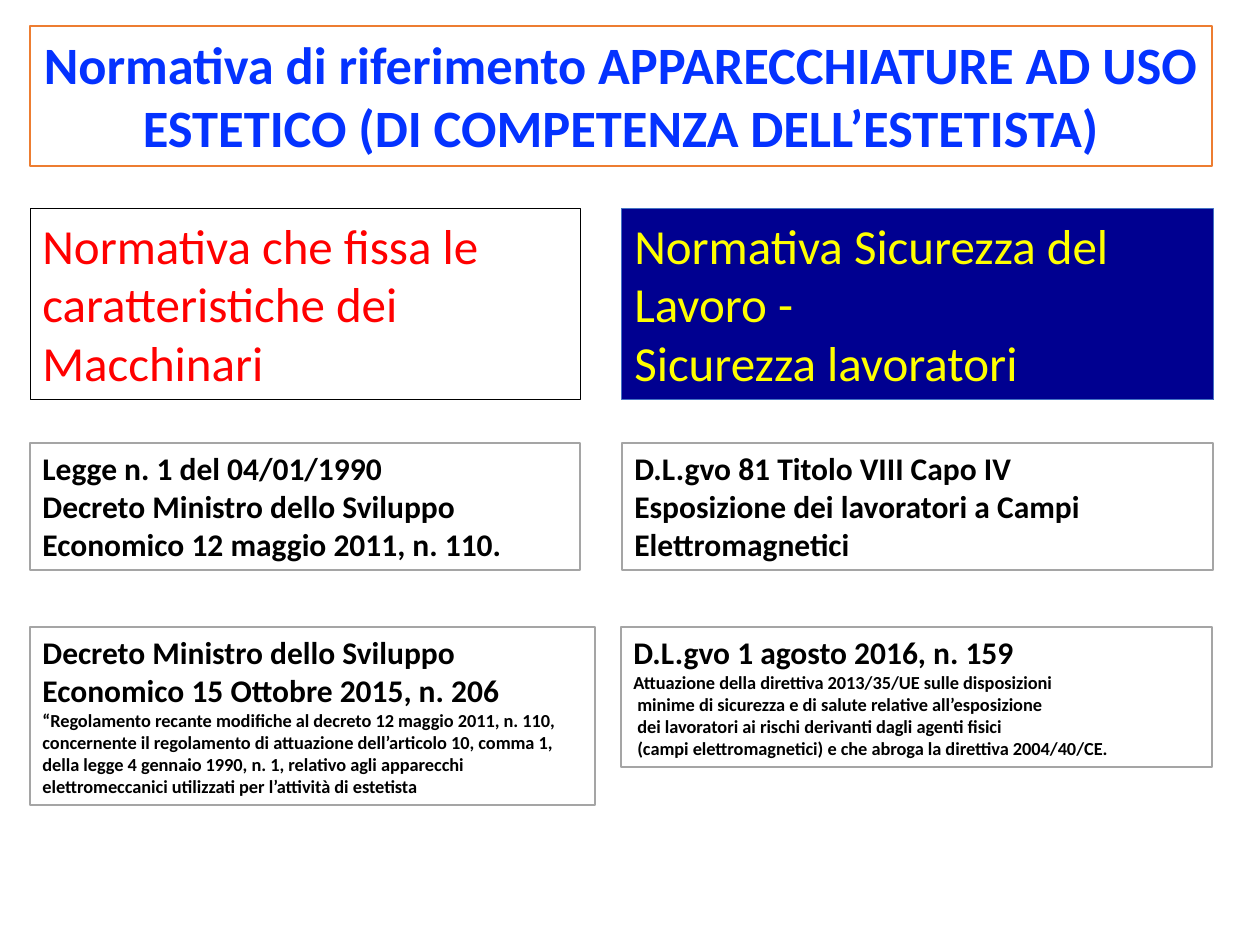
import pptx
import pptx.dml.color
import pptx.enum.shapes
import pptx.enum.text
import pptx.util

PX = 914400 // 126
FONT = "Calibri"
LEFT, RIGHT = 30, 622
HEADING_TOP, LAW_TOP, UPDATE_TOP = 209, 443, 627
COLORS = {
    "white": "FFFFFF", "black": "000000", "blue": "0432FF", "red": "FF0000",
    "yellow": "FFFF00", "navy": "000090", "orange": "ED7D31",
    "gray": "A5A5A5", "steel": "4472C4",
}


def color(name):
    return pptx.dml.color.RGBColor.from_string(COLORS[name])


def place(s, x, y, w, h):
    s.left, s.top, s.width, s.height = [v * PX for v in (x, y, w, h)]


def style_box(s, fill, line, width):
    if fill:
        s.fill.solid()
        s.fill.fore_color.rgb = color(fill)
    else:
        s.fill.background()
    s.line.color.rgb = color(line)
    s.line.width = pptx.util.Pt(width)


def add_text(s, lines, ink, bold, align):
    tf = s.text_frame
    tf.word_wrap = True
    tf.auto_size = pptx.enum.text.MSO_AUTO_SIZE.SHAPE_TO_FIT_TEXT
    tf.vertical_anchor = pptx.enum.text.MSO_ANCHOR.TOP
    for i, (text, size, indent) in enumerate(lines):
        p = tf.add_paragraph() if i else tf.paragraphs[0]
        p.alignment = align
        if indent:
            p._p.get_or_add_pPr().set("marL", str(indent * PX))
        r = p.add_run()
        r.text = text
        r.font.name = FONT
        r.font.size = pptx.util.Pt(size)
        r.font.bold = bold
        r.font.color.rgb = color(ink)


def add_title(slide, text):
    s = slide.shapes.title
    place(s, LEFT, 26, 1182, 140)
    style_box(s, "white", "orange", 1)
    add_text(s, [(text, 30, 0)], "blue", True, pptx.enum.text.PP_ALIGN.CENTER)


def add_box(slide, box, lines, ink="black", fill="white", line="gray", width=1, bold=True):
    s = slide.shapes.add_shape(pptx.enum.shapes.MSO_SHAPE.RECTANGLE, 0, 0, PX, PX)
    place(s, *box)
    s.shadow.inherit = False
    style_box(s, fill, line, width)
    add_text(s, lines, ink, bold, pptx.enum.text.PP_ALIGN.LEFT)


def main():
    prs = pptx.Presentation()
    prs.slide_width = 1260 * PX
    prs.slide_height = 945 * PX
    slide = prs.slides.add_slide(prs.slide_layouts[5])

    add_title(slide, "Normativa di riferimento APPARECCHIATURE AD USO ESTETICO "
                     "(DI COMPETENZA DELL’ESTETISTA)")
    add_box(slide, (LEFT, HEADING_TOP, 550, 191),
            [("Normativa che fissa le caratteristiche dei Macchinari", 28, 0)],
            ink="red", fill=None, line="black", width=0.5, bold=False)
    add_box(slide, (RIGHT, HEADING_TOP, 592, 191),
            [("Normativa Sicurezza del Lavoro -", 28, 0),
             ("Sicurezza lavoratori", 28, 0)],
            ink="yellow", fill="navy", line="steel", width=0.5, bold=False)
    add_box(slide, (LEFT, LAW_TOP, 550, 127),
            [("Legge n. 1 del 04/01/1990", 18, 0),
             ("Decreto Ministro dello Sviluppo Economico 12 maggio 2011, n. 110.", 18, 0)])
    add_box(slide, (RIGHT, LAW_TOP, 591, 127),
            [("D.L.gvo 81 Titolo VIII Capo IV", 18, 0),
             ("Esposizione dei lavoratori a Campi Elettromagnetici", 18, 0)])
    add_box(slide, (LEFT, UPDATE_TOP, 565, 178),
            [("Decreto Ministro dello Sviluppo Economico 15 Ottobre 2015, n. 206", 18, 0),
             ("“Regolamento recante modifiche al decreto 12 maggio 2011, n. 110, "
              "concernente il regolamento di attuazione dell’articolo 10, comma 1, "
              "della legge 4 gennaio 1990, n. 1, relativo agli apparecchi "
              "elettromeccanici utilizzati per l’attività di estetista", 10.5, 0)])
    add_box(slide, (RIGHT - 1, UPDATE_TOP, 591, 140),
            [("D.L.gvo 1 agosto 2016, n. 159", 18, 0),
             ("Attuazione della direttiva 2013/35/UE sulle disposizioni", 10.5, 0),
             ("minime di sicurezza e di salute relative all’esposizione", 10.5, 4),
             ("dei lavoratori ai rischi derivanti dagli agenti fisici", 10.5, 4),
             ("(campi elettromagnetici) e che abroga la direttiva 2004/40/CE.", 10.5, 4)])

    prs.save("out.pptx")


if __name__ == "__main__":
    main()
